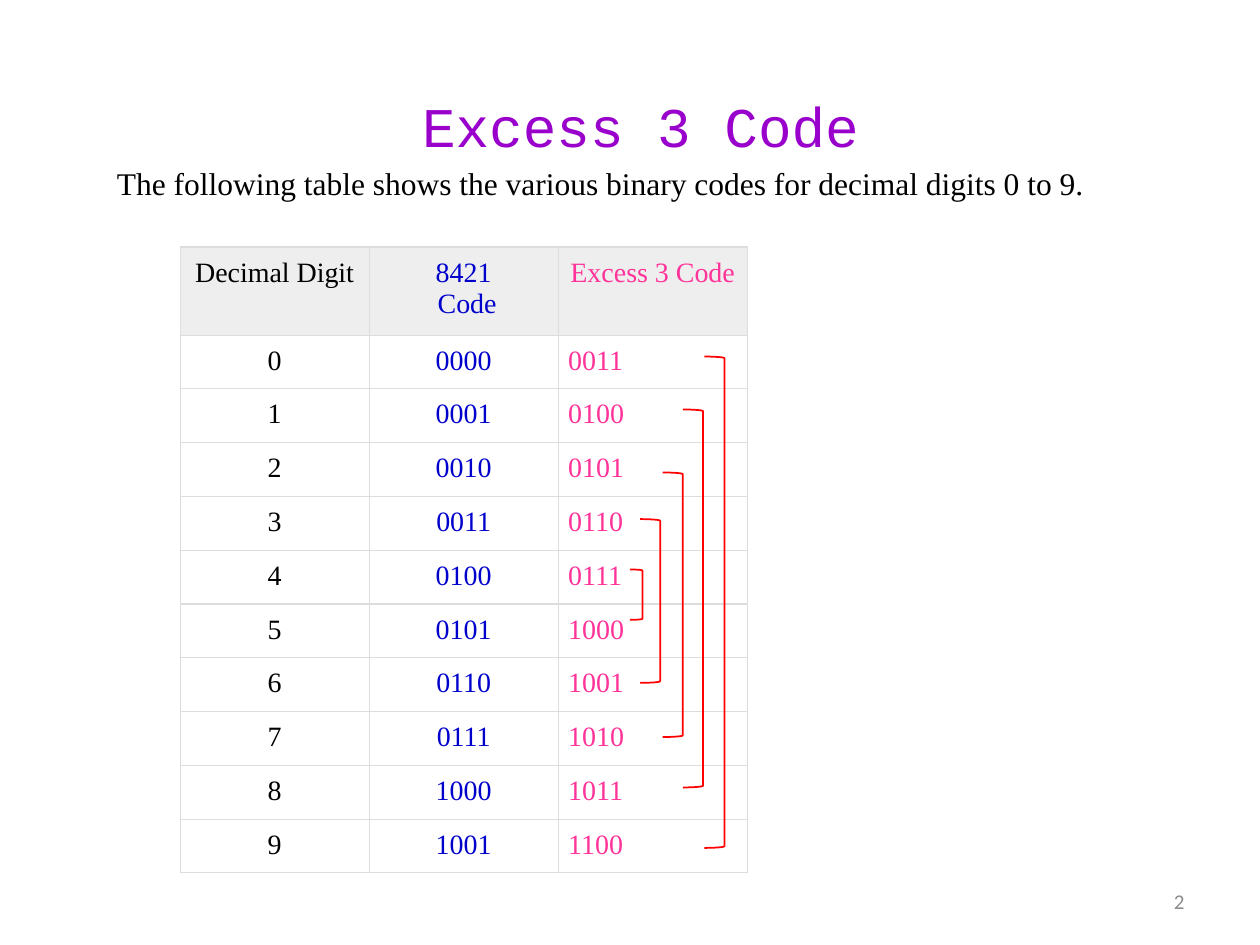
"""Build the Excess 3 Code slide with its digit table and complement brackets."""
import pptx
import pptx.chart.data
import pptx.dml.color
import pptx.enum.shapes
import pptx.enum.text
import pptx.oxml
import pptx.oxml.ns
import pptx.util

Inches, Pt = pptx.util.Inches, pptx.util.Pt
ALIGN = pptx.enum.text.PP_ALIGN
ANCHOR = pptx.enum.text.MSO_ANCHOR
COLORS = {
    "title": "9900CC", "text": "000000", "binary": "0000CC", "excess": "FF3399",
    "head": "EEEEEE", "border": "DDDDDD", "bracket": "FF0000", "number": "8C8C8C",
}


def shade(name):
    return pptx.dml.color.RGBColor.from_string(COLORS[name])


def style(para, font, size, color, align=ALIGN.LEFT):
    para.alignment = align
    para.font.name = font
    para.font.size = Pt(size)
    para.font.color.rgb = shade(color)


deck = pptx.Presentation()
deck.slide_width, deck.slide_height = Inches(10), Inches(7.5)
slide = deck.slides.add_slide(deck.slide_layouts[5])
shapes = slide.shapes

title = shapes.title
title.left, title.top = Inches(2.42), Inches(0.67)
title.width, title.height = Inches(5.33), Inches(0.64)
title.text_frame.text = "Excess 3 Code"
style(title.text_frame.paragraphs[0], "Courier New", 32, "title", ALIGN.CENTER)

intro = shapes.add_textbox(Inches(0.83), Inches(1.25), Inches(8.33), Inches(0.4))
intro.text_frame.word_wrap = True
intro.text_frame.text = "The following table shows the various binary codes for decimal digits 0 to 9."
style(intro.text_frame.paragraphs[0], "Times New Roman", 18, "text")

rows = [("Decimal Digit", "8421\n Code", "Excess 3 Code")]
rows += [(str(n), f"{n:04b}", f"{n + 3:04b}") for n in range(10)]
table = shapes.add_table(
    len(rows), 3, Inches(1.43), Inches(1.96), Inches(4.5), Inches(4.95)
).table
table.first_row = table.horz_banding = False
for row in table.rows:
    row.height = Inches(4.25 / 10)
table.rows[0].height = Inches(0.7)

for r, row in enumerate(rows):
    for c, (text, color) in enumerate(zip(row, ("text", "binary", "excess"))):
        cell = table.cell(r, c)
        cell.margin_left = cell.margin_right = Inches(0.08)
        cell.margin_top = cell.margin_bottom = Inches(0.08)
        cell.text_frame.text = text
        align = ALIGN.LEFT if r and c == 2 else ALIGN.CENTER
        for para in cell.text_frame.paragraphs:
            style(para, "Times New Roman", 16, color, align)
        props = cell._tc.get_or_add_tcPr()
        for side in "LRTB":
            props.append(pptx.oxml.parse_xml(
                f'<a:ln{side} {pptx.oxml.ns.nsdecls("a")} w="{Pt(0.75)}"><a:solidFill>'
                f'<a:srgbClr val="{COLORS["border"]}"/></a:solidFill></a:ln{side}>'
            ))
        if r:
            cell.fill.background()
        else:
            cell.fill.solid()
            cell.fill.fore_color.rgb = shade("head")

brackets = [
    (5, 4.52, 0.1, 0.4), (5.08, 4.12, 0.16, 1.3), (5.26, 3.75, 0.16, 2.1),
    (5.42, 3.25, 0.16, 3), (5.59, 2.83, 0.16, 3.9),
]
for box in brackets:
    mark = shapes.add_shape(
        pptx.enum.shapes.MSO_SHAPE.RIGHT_BRACKET, *(Inches(v) for v in box)
    )
    mark.shadow.inherit = False
    mark.fill.background()
    mark.line.color.rgb = shade("bracket")
    mark.line.width = Pt(1)

number = shapes.add_textbox(Inches(7.17), Inches(6.95), Inches(2.33), Inches(0.4))
number.text_frame.word_wrap = True
number.text_frame.vertical_anchor = ANCHOR.MIDDLE
number.text_frame.text = "2"
style(number.text_frame.paragraphs[0], "Calibri", 12, "number", ALIGN.RIGHT)

deck.save("out.pptx")
